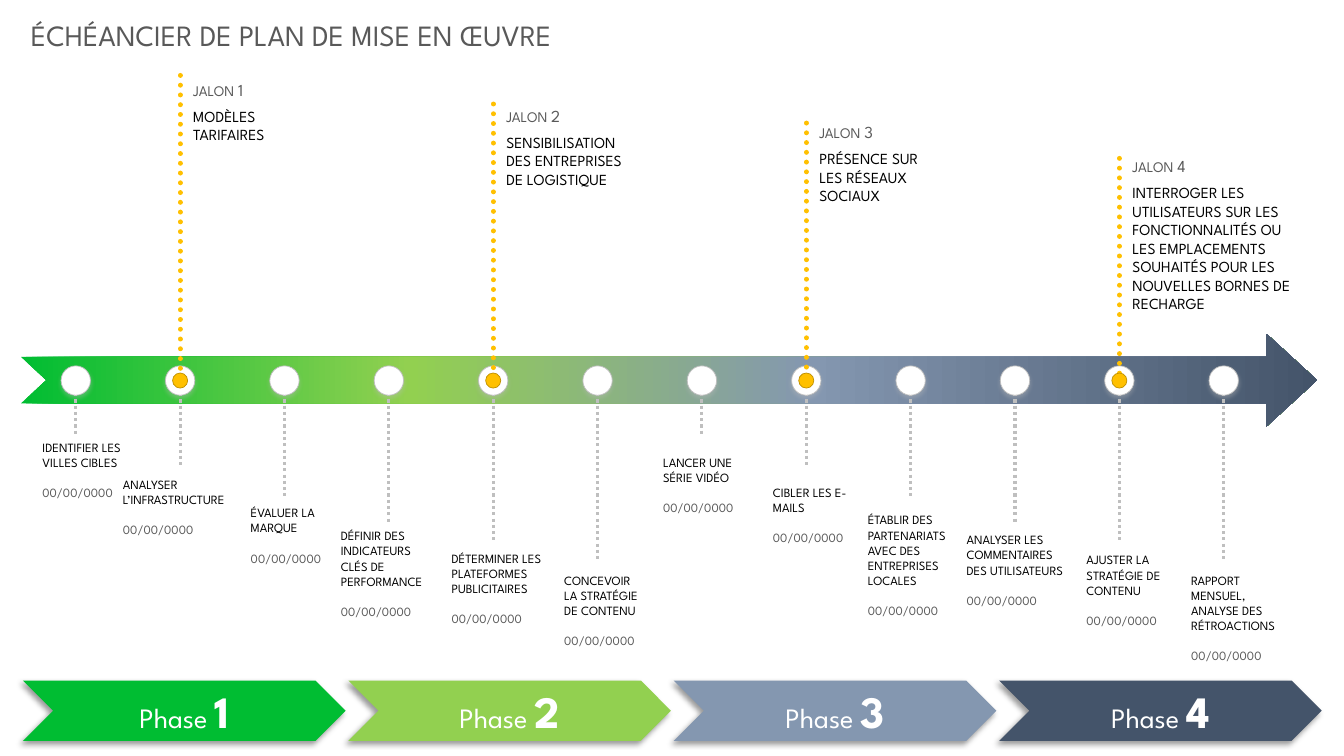
"""Build a one-slide implementation timeline with phases, steps and milestones."""
from lxml import etree
from pptx import Presentation
from pptx.dml.color import RGBColor
from pptx.enum.dml import MSO_LINE
from pptx.enum.shapes import MSO_CONNECTOR, MSO_SHAPE
from pptx.enum.text import MSO_ANCHOR, PP_ALIGN
from pptx.oxml.ns import qn
from pptx.util import Cm, Pt

CHEVRON, ARROW, OVAL = MSO_SHAPE.CHEVRON, MSO_SHAPE.NOTCHED_RIGHT_ARROW, MSO_SHAPE.OVAL
STRAIGHT, DOTS = MSO_CONNECTOR.STRAIGHT, MSO_LINE.ROUND_DOT
MIDDLE, CENTER = MSO_ANCHOR.MIDDLE, PP_ALIGN.CENTER
FONT = "League Spartan"

TITLE = "ÉCHÉANCIER DE PLAN DE MISE EN ŒUVRE"
DATE = "00/00/0000"
COLORS = {
    "green": "00BD32", "lime": "92D050", "steel": "8497B0", "navy": "44546A",
    "white": "FFFFFF", "black": "000000", "gray": "595959", "silver": "BFBFBF",
    "gold": "FFC000", "bronze": "BF9000",
}
PHASES = ["green", "lime", "steel", "navy"]
GRADIENT = list(zip([0, 30, 61, 100], PHASES))
STEM_LENGTHS = [1.4, 2.16, 2.92, 3.56, 4.06, 4.57]
STEPS = [
    ("IDENTIFIER LES VILLES CIBLES", 1.07, 10.95, 2.03),
    ("ANALYSER L’INFRASTRUCTURE", 3.1, 11.89, 3.48),
    ("ÉVALUER LA MARQUE", 6.32, 12.6, 2.03),
    ("DÉFINIR DES INDICATEURS CLÉS DE PERFORMANCE", 8.59, 13.18, 2.41),
    ("DÉTERMINER LES PLATEFORMES PUBLICITAIRES", 11.38, 13.74, 2.97),
    ("CONCEVOIR LA STRATÉGIE DE CONTENU", 14.22, 14.3, 2.03),
    ("LANCER UNE SÉRIE VIDÉO", 16.71, 11.33, 2.03),
    ("CIBLER LES E-MAILS", 19.48, 12.09, 1.91),
    ("ÉTABLIR DES PARTENARIATS AVEC DES ENTREPRISES LOCALES", 21.87, 12.78, 2.29),
    ("ANALYSER LES COMMENTAIRES DES UTILISATEURS", 24.36, 13.28, 2.67),
    ("AJUSTER LA STRATÉGIE DE CONTENU", 27.38, 13.79, 2.03),
    ("RAPPORT MENSUEL, ANALYSE DES RÉTROACTIONS", 30.02, 14.3, 2.49),
]
MILESTONES = [
    ("MODÈLES TARIFAIRES", 1.9, 1.88, 3.76),
    ("SENSIBILISATION DES ENTREPRISES DE LOGISTIQUE", 2.62, 2.54, 3.71),
    ("PRÉSENCE SUR LES RÉSEAUX SOCIAUX", 3.1, 2.95, 3.48),
    ("INTERROGER LES UTILISATEURS SUR LES FONCTIONNALITÉS OU LES EMPLACEMENTS "
     "SOUHAITÉS POUR LES NOUVELLES BORNES DE RECHARGE", 3.99, 3.81, 4.83),
]
FIRST_X, STEP_GAP, AXIS_Y = 1.91, 2.63, 9.59


def color(name):
    return RGBColor.from_string(COLORS[name])


def add_color(parent, name):
    return etree.SubElement(parent, qn("a:srgbClr"), val=COLORS[name])


def add_shadow(shape, name, opacity, blur, distance, angle):
    effects = etree.SubElement(shape._element.spPr, qn("a:effectLst"))
    shadow = etree.SubElement(
        effects, qn("a:outerShdw"), blurRad=str(Pt(blur)), dist=str(Pt(distance)),
        dir=str(angle * 60000), algn="ctr", rotWithShape="0")
    etree.SubElement(add_color(shadow, name), qn("a:alpha"), val=str(opacity * 1000))


def add_filled(shapes, kind, left, top, width, height, fill, line=None, shadow=None):
    shape = shapes.add_shape(kind, Cm(left), Cm(top), Cm(width), Cm(height))
    shape.fill.solid()
    shape.fill.fore_color.rgb = color(fill)
    if line:
        shape.line.color.rgb = color(line)
        shape.line.width = Pt(0.5)
    else:
        shape.line.fill.background()
    if shadow:
        add_shadow(shape, *shadow)
    else:
        shape.shadow.inherit = False
    return shape


def add_circle(shapes, x, diameter, fill, line, shadow=None):
    add_filled(shapes, OVAL, x - diameter / 2, AXIS_Y - diameter / 2,
               diameter, diameter, fill, line, shadow)


def add_dotted(shapes, x, top, bottom, name, width, cap):
    line = shapes.add_connector(STRAIGHT, Cm(x), Cm(top), Cm(x), Cm(bottom))
    line.line.color.rgb = color(name)
    line.line.width = Pt(width)
    line.line.dash_style = DOTS
    line.line._ln.set("cap", cap)
    etree.SubElement(line._element.spPr, qn("a:effectLst"))


def add_span(para, text, size, name, bold=False):
    span = para.add_run()
    span.text = text
    span.font.name, span.font.size, span.font.bold = FONT, Pt(size), bold
    span.font.color.rgb = color(name)


def add_text(shapes, left, top, width, height, spans):
    box = shapes.add_textbox(Cm(left), Cm(top), Cm(width), Cm(height))
    box.text_frame.word_wrap = True
    for text, size, name in spans:
        add_span(box.text_frame.paragraphs[0], text, size, name)
    return box.text_frame


def add_phase(page, index, fill):
    shape = add_filled(page.shapes, CHEVRON, 0.58 + 8.2 * index, 17.15, 8.13, 1.52,
                       fill, shadow=("black", 40, 4, 3, 135))
    shape.text_frame.vertical_anchor = MIDDLE
    para = shape.text_frame.paragraphs[0]
    para.alignment = CENTER
    add_span(para, "Phase ", 20, "white")
    add_span(para, str(index + 1), 32, "white", True)


def add_axis(page):
    arrow = add_filled(page.shapes, ARROW, 0.53, 8.41, 32.66, 2.34, "green")
    arrow.adjustments[0], arrow.adjustments[1] = 0.5, 0.545
    properties = arrow._element.spPr
    gradient = etree.Element(qn("a:gradFill"), rotWithShape="1")
    stops = etree.SubElement(gradient, qn("a:gsLst"))
    for position, name in GRADIENT:
        add_color(etree.SubElement(stops, qn("a:gs"), pos=str(position * 1000)), name)
    etree.SubElement(gradient, qn("a:lin"), ang="0", scaled="0")
    properties.replace(properties.find(qn("a:solidFill")), gradient)


def add_step_text(page, text, left, top, width):
    frame = add_text(page.shapes, left, top, width, 2.29, [(text, 9, "black")])
    frame.margin_left = frame.margin_right = 0
    frame.margin_top, frame.margin_bottom = Cm(0.13), Cm(0.03)
    para = frame.add_paragraph()
    para.space_before = Cm(0.38)
    add_span(para, DATE, 9, "gray")


def add_milestone(page, index, text, line_top, label_top, width):
    shapes = page.shapes.add_group_shape().shapes
    x = FIRST_X + STEP_GAP * (1 + 3 * index)
    text_top = label_top + 0.69
    add_dotted(shapes, x, line_top, AXIS_Y - 0.03, "gold", 3.5, "rnd")
    add_circle(shapes, x, 0.38, "gold", "bronze")
    add_text(shapes, x + 0.08, label_top, 2.97, 0.66,
             [("JALON", 10.5, "gray"), (" ", 11, "gray"), (str(index + 1), 12, "gray")])
    add_text(shapes, x + 0.08, text_top, width, 8.9 - text_top, [(text, 11, "black")])


def main():
    deck = Presentation()
    deck.slide_width, deck.slide_height = Cm(33.87), Cm(19.05)
    page = deck.slides.add_slide(deck.slide_layouts[6])
    for index, fill in enumerate(PHASES):
        add_phase(page, index, fill)
    add_axis(page)
    centers = [FIRST_X + STEP_GAP * index for index in range(len(STEPS))]
    for x, length in zip(centers, STEM_LENGTHS * 2):
        add_dotted(page.shapes, x, AXIS_Y, AXIS_Y + length, "silver", 2.25, "flat")
    for x in centers:
        add_circle(page.shapes, x, 0.74, "white", "silver", ("silver", 35, 3.1, 1.8, 90))
    for step in STEPS:
        add_step_text(page, *step)
    for index, milestone in enumerate(MILESTONES):
        add_milestone(page, index, *milestone)
    add_text(page.shapes, 0.53, 0.3, 23.37, 1.14, [(TITLE, 21, "gray")])
    deck.save("out.pptx")


if __name__ == "__main__":
    main()
